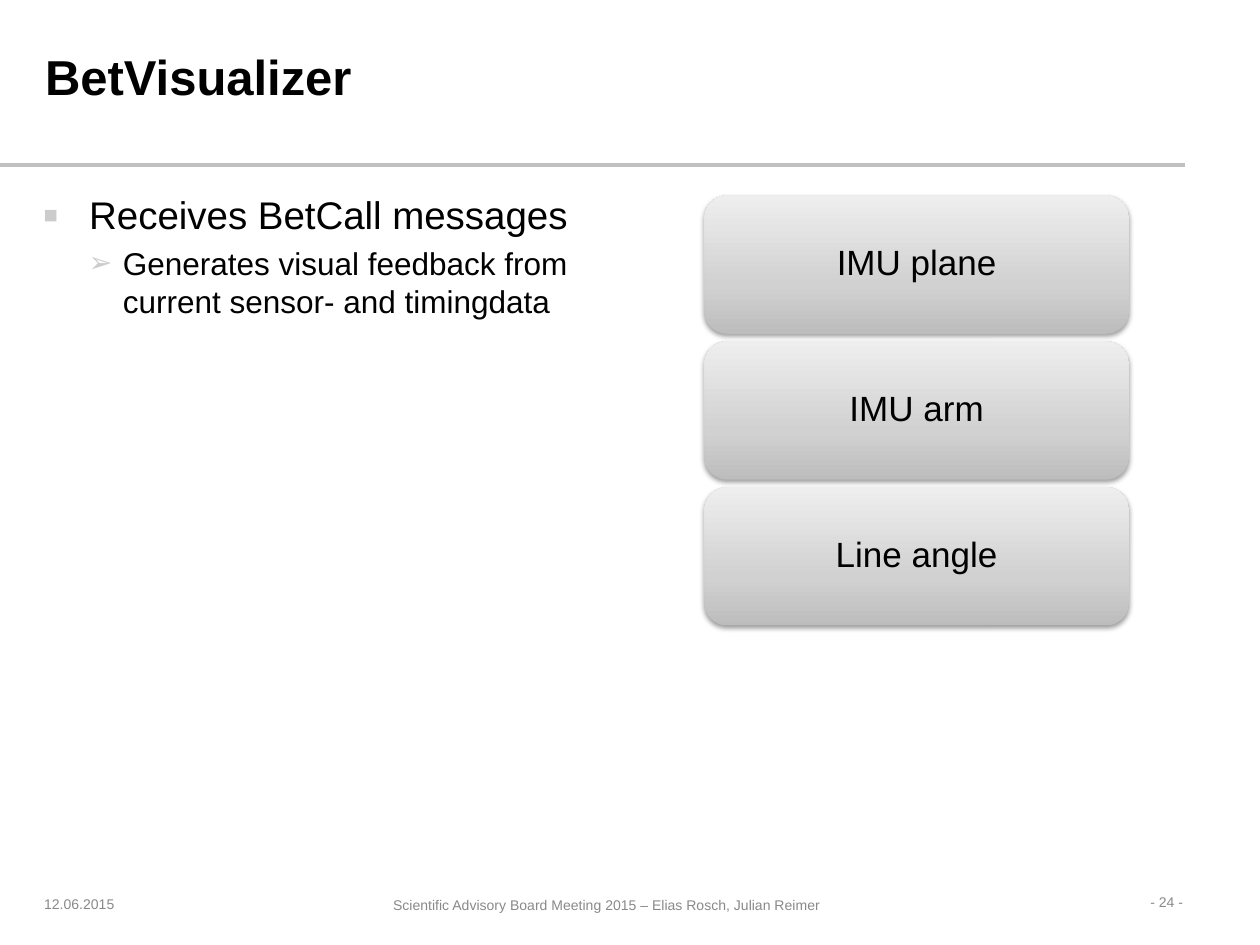
import dataclasses
import typing

import pptx
import pptx.dml.color
import pptx.enum.shapes
import pptx.enum.text
import pptx.oxml
import pptx.oxml.ns
import pptx.util

Cm = pptx.util.Cm
Pt = pptx.util.Pt
ALIGN = pptx.enum.text.PP_ALIGN
ANCHOR = pptx.enum.text.MSO_ANCHOR
NAMESPACE = pptx.oxml.ns.nsdecls("a")

BLACK = "000000"
FOOTER_GRAY = "898989"
BULLET_GRAY = "CCCCCC"
RULE_GRAY = "C0C0C1"
GRADIENT_STOPS = ((0, "BDBDBD"), (35, "D1D1D1"), (100, "EEEEEE"))


@dataclasses.dataclass
class Bullet:
    character: str
    percent: int
    margin: float
    hanging: float


@dataclasses.dataclass
class Line:
    text: str
    size: float
    color: str = BLACK
    bold: bool = False
    bullet: typing.Optional[Bullet] = None
    layout: dict = dataclasses.field(default_factory=dict)


@dataclasses.dataclass
class TextArea:
    bounds: tuple
    lines: list
    insets: tuple = (0, 0)
    anchor: typing.Any = ANCHOR.MIDDLE


def rgb(value: str):
    return pptx.dml.color.RGBColor.from_string(value)


def apply_format(target, values: dict) -> None:
    for name, value in values.items():
        setattr(target, name, value)


def add_bullet(paragraph, bullet: Bullet) -> None:
    properties = paragraph._p.get_or_add_pPr()
    properties.set("marL", str(Cm(bullet.margin)))
    properties.set("indent", str(-Cm(bullet.hanging)))
    for element in (
        f'<a:buClr {NAMESPACE}><a:srgbClr val="{BULLET_GRAY}"/></a:buClr>',
        f'<a:buSzPct {NAMESPACE} val="{bullet.percent * 1000}"/>',
        f'<a:buFont {NAMESPACE} typeface="Arial"/>',
        f'<a:buChar {NAMESPACE} char="{bullet.character}"/>',
    ):
        properties.append(pptx.oxml.parse_xml(element))


def write_text(shape, area: TextArea) -> None:
    horizontal, vertical = map(Cm, area.insets)
    frame = shape.text_frame
    apply_format(frame, {
        "word_wrap": True,
        "vertical_anchor": area.anchor,
        "margin_left": horizontal,
        "margin_right": horizontal,
        "margin_top": vertical,
        "margin_bottom": vertical,
    })
    for index, line in enumerate(area.lines):
        paragraph = frame.add_paragraph() if index else frame.paragraphs[0]
        if line.bullet:
            add_bullet(paragraph, line.bullet)
        apply_format(paragraph, line.layout)
        run = paragraph.add_run()
        run.text = line.text
        apply_format(run.font, {"name": "Arial", "size": Pt(line.size), "bold": line.bold})
        run.font.color.rgb = rgb(line.color)


def add_text_area(slide, area: TextArea) -> None:
    write_text(slide.shapes.add_textbox(*map(Cm, area.bounds)), area)


def add_sensor_box(slide, area: TextArea) -> None:
    shape = slide.shapes.add_shape(
        pptx.enum.shapes.MSO_SHAPE.ROUNDED_RECTANGLE, *map(Cm, area.bounds)
    )
    shape.shadow.inherit = False
    shape.line.fill.background()
    properties = shape._element.spPr
    stops = "".join(
        f'<a:gs pos="{position * 1000}"><a:srgbClr val="{color}"/></a:gs>'
        for position, color in GRADIENT_STOPS
    )
    gradient = pptx.oxml.parse_xml(
        f'<a:gradFill {NAMESPACE} rotWithShape="1"><a:gsLst>{stops}</a:gsLst>'
        '<a:lin ang="16200000" scaled="0"/></a:gradFill>'
    )
    properties.find(pptx.oxml.ns.qn("a:prstGeom")).addnext(gradient)
    shadow = pptx.oxml.parse_xml(
        f'<a:outerShdw {NAMESPACE} blurRad="{Pt(3.1)}" dist="{Pt(1.6)}" dir="5400000" '
        f'rotWithShape="0"><a:srgbClr val="{BLACK}"><a:alpha val="38000"/></a:srgbClr>'
        '</a:outerShdw>'
    )
    properties.find(pptx.oxml.ns.qn("a:effectLst")).append(shadow)
    write_text(shape, area)


def add_header_rule(slide) -> None:
    rule = slide.shapes.add_connector(
        pptx.enum.shapes.MSO_CONNECTOR.STRAIGHT, Cm(0), Cm(3.33), Cm(23.88), Cm(3.33)
    )
    rule.line.color.rgb = rgb(RULE_GRAY)
    rule.line.width = Pt(2.25)
    rule._element.spPr.append(pptx.oxml.parse_xml(f"<a:effectLst {NAMESPACE}/>"))


def main() -> None:
    presentation = pptx.Presentation()
    apply_format(presentation, {"slide_width": Cm(25.4), "slide_height": Cm(19.05)})
    slide = presentation.slides.add_slide(presentation.slide_layouts[6])
    add_header_rule(slide)

    centered = {"alignment": ALIGN.CENTER}
    footer = "Scientific Advisory Board Meeting 2015 – Elias Rosch, Julian Reimer"
    text_areas = [
        TextArea((0.89, 17.63, 2.41, 1.17), [Line("12.06.2015", 8, FOOTER_GRAY)]),
        TextArea((4.17, 17.91, 16.13, 0.66), [Line(footer, 8, FOOTER_GRAY, layout=centered)]),
        TextArea(
            (20.7, 17.88, 3.4, 0.61),
            [Line("- 24 -", 8, FOOTER_GRAY, layout={"alignment": ALIGN.RIGHT})],
            (0.25, 0.13), ANCHOR.TOP,
        ),
        TextArea(
            (0.66, 0.15, 20.09, 2.9),
            [Line("BetVisualizer", 28, bold=True, layout={"line_spacing": 0.9})],
            (0.25, 0),
        ),
        TextArea(
            (0.1, 3.73, 13.31, 13.79),
            [
                Line("Receives BetCall messages", 22, bullet=Bullet("▪", 120, 1.45, 0.94)),
                Line(
                    "Generates visual feedback from current sensor- and timingdata", 18,
                    bullet=Bullet("➢", 90, 2.13, 0.69), layout={"space_before": Pt(3.6)},
                ),
            ],
            (0.25, 0.13), ANCHOR.TOP,
        ),
    ]
    for area in text_areas:
        add_text_area(slide, area)

    box_top, box_pitch = 3.94, 2.94
    for index, label in enumerate(("IMU plane", "IMU arm", "Line angle")):
        line = Line(label, 20, layout={**centered, "line_spacing": 0.9})
        bounds = (14.2, box_top + index * box_pitch, 8.56, 2.79)
        add_sensor_box(slide, TextArea(bounds, [line], (0.2, 0.1)))

    presentation.save("out.pptx")


if __name__ == "__main__":
    main()
